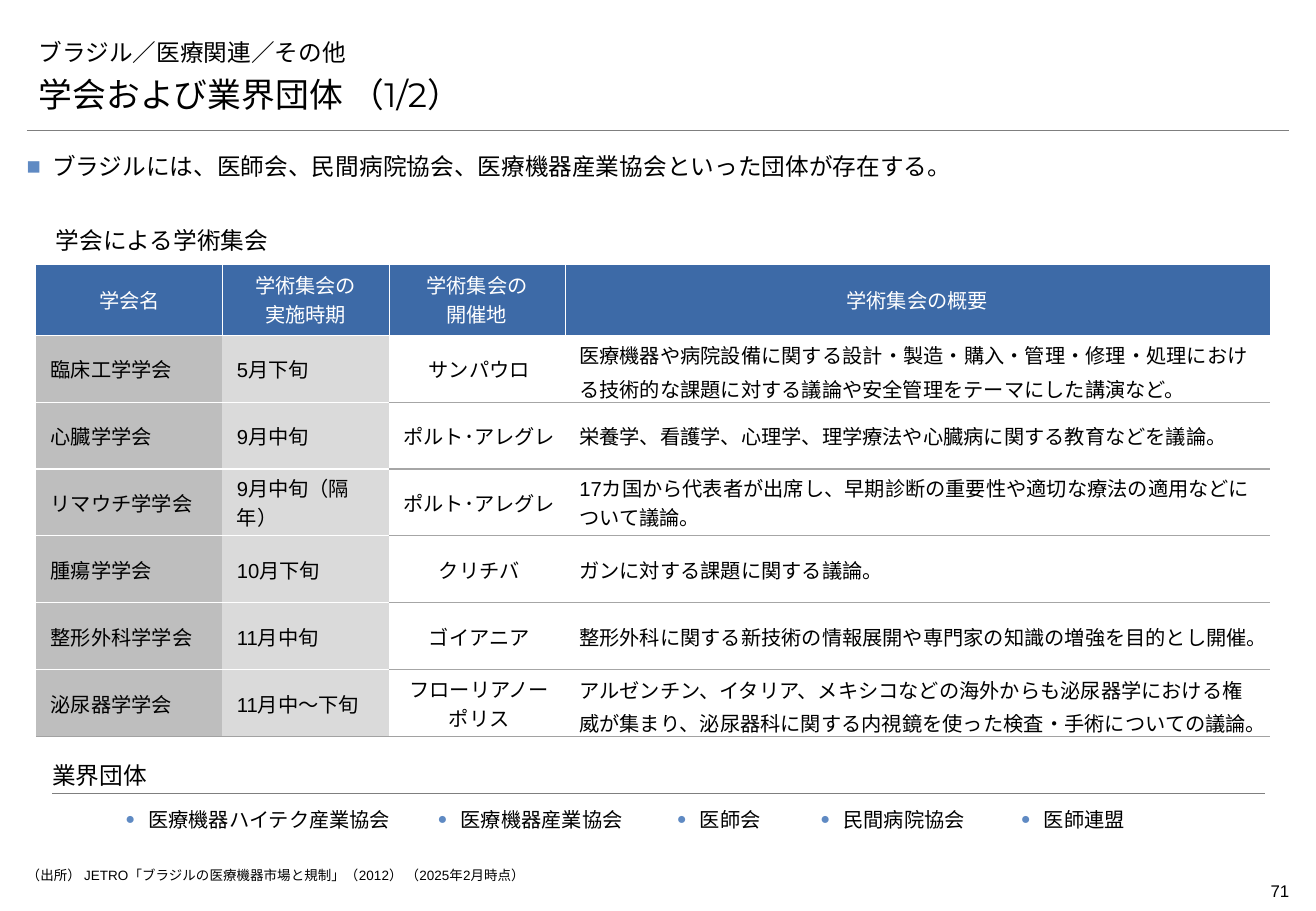
from dataclasses import dataclass

from lxml.etree import SubElement
from pptx import Presentation
from pptx.dml.color import RGBColor
from pptx.enum.shapes import MSO_CONNECTOR
from pptx.enum.text import MSO_ANCHOR, PP_ALIGN
from pptx.oxml.ns import qn
from pptx.util import Cm, Pt


@dataclass(frozen=True)
class Theme:
    """Colours, fonts and type sizes of the slide."""
    ink: str = "000000"
    white: str = "FFFFFF"
    header: str = "3D6AA7"
    name_fill: str = "BEBEBE"
    date_fill: str = "DADADA"
    bullet: str = "5F8AC3"
    rule: str = "7F7F7F"
    row_line: str = "A6A6A6"
    last_line: str = "A2A2A2"
    body_font: str = "Arial"
    title_font: str = "Montserrat"
    asian_font: str = "Noto Sans CJK JP"
    title: int = 20
    heading: int = 14
    cell: int = 12
    number: int = 10
    source: int = 8


@dataclass(frozen=True)
class Box:
    """A rectangle in centimetres."""
    left: float
    top: float
    width: float
    height: float

    def inner(self, left, top, width, height):
        """Return a box placed relative to this one."""
        return Box(self.left + left, self.top + top, width, height)

    def lengths(self):
        """Return left, top, width and height as lengths."""
        return [Cm(value) for value in (self.left, self.top, self.width, self.height)]


THEME = Theme()
MEETINGS = [
    ("学会名", "学術集会の\n実施時期", "学術集会の\n開催地", "学術集会の概要"),
    ("臨床工学学会", "5月下旬", "サンパウロ",
     "医療機器や病院設備に関する設計・製造・購入・管理・修理・処理における技術的な課題に対する議論や安全管理をテーマにした講演など。"),
    ("心臓学学会", "9月中旬", "ポルト･アレグレ",
     "栄養学、看護学、心理学、理学療法や心臓病に関する教育などを議論。"),
    ("リマウチ学学会", "9月中旬（隔年）", "ポルト･アレグレ",
     "17カ国から代表者が出席し、早期診断の重要性や適切な療法の適用などについて議論。"),
    ("腫瘍学学会", "10月下旬", "クリチバ", "ガンに対する課題に関する議論。"),
    ("整形外科学学会", "11月中旬", "ゴイアニア",
     "整形外科に関する新技術の情報展開や専門家の知識の増強を目的とし開催。"),
    ("泌尿器学学会", "11月中～下旬", "フローリアノーポリス",
     "アルゼンチン、イタリア、メキシコなどの海外からも泌尿器学における権威が集まり、泌尿器科に関する内視鏡を使った検査・手術についての議論。"),
]
ASSOCIATIONS = ["医療機器ハイテク産業協会", "医療機器産業協会", "医師会", "民間病院協会", "医師連盟"]


def add_bullet(para, mark, indent, percent):
    """Give a paragraph a coloured bullet and a hanging indent."""
    properties = para._p.get_or_add_pPr()
    properties.set("marL", str(Cm(indent)))
    properties.set("indent", str(-Cm(indent)))
    colour = SubElement(properties, qn("a:buClr"))
    SubElement(colour, qn("a:srgbClr"), val=THEME.bullet)
    SubElement(properties, qn("a:buSzPct"), val=str(percent * 1000))
    SubElement(properties, qn("a:buFont"), typeface=THEME.body_font)
    SubElement(properties, qn("a:buChar"), char=mark)


def write(frame, text, size=THEME.cell, font=THEME.body_font, colour=THEME.ink,
          align=PP_ALIGN.LEFT, spacing=None, after=None, bullet=None):
    """Write one paragraph per line of text in the given format."""
    for index, line in enumerate(text.split("\n")):
        para = frame.add_paragraph() if index else frame.paragraphs[0]
        if bullet:
            add_bullet(para, *bullet)
        para.alignment = align
        if spacing:
            para.line_spacing = spacing
        if after:
            para.space_after = Pt(after)
        for piece in line.replace("・", "|・|").split("|"):
            span = para.add_run()
            span.text = piece
            span.font.size = Pt(size)
            span.font.name = font
            span.font.color.rgb = RGBColor.from_string(colour)
            asian = THEME.body_font if piece == "・" else THEME.asian_font
            SubElement(span._r.get_or_add_rPr(), qn("a:ea"), typeface=asian)


def set_margins(target, margins):
    """Set left, top, right and bottom margins in centimetres."""
    left, top, right, bottom = [Cm(value) for value in margins]
    target.margin_left, target.margin_top = left, top
    target.margin_right, target.margin_bottom = right, bottom


def add_text(page, box, text, margins=(0, 0, 0, 0), anchor=MSO_ANCHOR.TOP, **style):
    """Add a wrapping text box."""
    frame = page.shapes.add_textbox(*box.lengths()).text_frame
    frame.word_wrap = True
    frame.vertical_anchor = anchor
    set_margins(frame, margins)
    write(frame, text, **style)


def add_rule(page, left, top, width, weight):
    """Add a thin horizontal rule."""
    line = page.shapes.add_connector(
        MSO_CONNECTOR.STRAIGHT, Cm(left), Cm(top), Cm(left + width), Cm(top))
    line.line.color.rgb = RGBColor.from_string(THEME.rule)
    line.line.width = Pt(weight)
    SubElement(line._element.spPr, qn("a:effectLst"))


def add_grid(page, box, widths, heights):
    """Add an unstyled table with the given column widths and row heights."""
    table = page.shapes.add_table(len(heights), len(widths), *box.lengths()).table
    table.first_row = table.horz_banding = False
    style = table._tbl.tblPr.find(qn("a:tableStyleId"))
    style.text = "{2D5ABB26-0587-4C30-8999-92F81FD0307C}"
    for column, width in zip(table.columns, widths):
        column.width = Cm(width)
    for row, height in zip(table.rows, heights):
        row.height = Cm(height)
    return table


def fill_cell(cell, text, fill, margins, edges=None, **style):
    """Set a cell's borders, fill, margins and text."""
    properties = cell._tc.get_or_add_tcPr()
    for side, (colour, weight) in (edges or {}).items():
        line = SubElement(properties, qn(f"a:ln{side}"), w=str(Pt(weight)))
        solid = SubElement(line, qn("a:solidFill"))
        SubElement(solid, qn("a:srgbClr"), val=colour)
    cell.fill.solid()
    cell.fill.fore_color.rgb = RGBColor.from_string(fill)
    cell.vertical_anchor = MSO_ANCHOR.MIDDLE
    set_margins(cell, margins)
    write(cell.text_frame, text, **style)


def row_edge(row, column):
    """Return colour and weight of the line below a row in one column."""
    if row == len(MEETINGS) - 1:
        return THEME.last_line, 0.5
    return (THEME.row_line if row > 0 and column > 1 else THEME.white), 0.75


def add_header(page, box):
    """Add the breadcrumb, the title and the rule below them."""
    style = dict(margins=(0.25, 0.13, 0.25, 0.13), anchor=MSO_ANCHOR.BOTTOM,
                 font=THEME.title_font)
    add_text(page, box.inner(0, 0, box.width, 0.99), "ブラジル／医療関連／その他",
             size=THEME.heading, **style)
    add_text(page, box.inner(0, 0.99, box.width, 0.99), "学会および業界団体 （1/2）",
             size=THEME.title, **style)
    add_rule(page, box.left, box.top + box.height, box.width, 0.25)


def add_heading(page, box, text):
    """Add a section heading."""
    add_text(page, box, text, margins=(0, 0.13, 0, 0.2), anchor=MSO_ANCHOR.BOTTOM,
             size=THEME.heading, font=THEME.title_font)


def add_meetings(page, box):
    """Add the heading and table of academic meetings."""
    add_heading(page, box.inner(0.41, 0, 15.19, 0.99), "学会による学術集会")
    heights = [1.47] + [1.4] * (len(MEETINGS) - 1)
    table = add_grid(page, box.inner(0, 1.02, box.width, sum(heights)),
                     [3.89, 3.48, 3.68, 14.73], heights)
    fills = [THEME.name_fill, THEME.date_fill, THEME.white, THEME.white]
    for row, texts in enumerate(MEETINGS):
        for column, text in enumerate(texts):
            edges = {}
            if row == 0 and column < len(texts) - 1:
                edges["R"] = (THEME.white, 0.5)
            if row:
                edges["T"] = row_edge(row - 1, column)
            edges["B"] = row_edge(row, column)
            centred = row == 0 or column == 2
            fill_cell(table.cell(row, column), text,
                      fills[column] if row else THEME.header,
                      (0.3, 0.03, 0.2, 0.03) if row else (0.25, 0.1, 0.25, 0.13), edges,
                      colour=THEME.ink if row else THEME.white,
                      align=PP_ALIGN.CENTER if centred else PP_ALIGN.LEFT,
                      spacing=1.13 if "・" in text else None)


def add_associations(page, box):
    """Add the heading, rule and bulleted row of industry associations."""
    widths = [6.53, 5, 3, 4.19, 3.4]
    table = add_grid(page, box.inner(1.53, 0.99, sum(widths), 0.79), widths, [0.79])
    for column, name in enumerate(ASSOCIATIONS):
        fill_cell(table.cell(0, column), name, THEME.white, (0, 0.03, 0.03, 0),
                  bullet=("●", 0.48, 80))
    add_rule(page, box.left, box.top + 0.87, box.width, 0.75)
    add_heading(page, box.inner(0, 0, box.width, 0.99), "業界団体")


def add_footer(page, box):
    """Add the source line and the page number."""
    add_text(page, box.inner(0, 0, 24, 0.41),
             "（出所） JETRO「ブラジルの医療機器市場と規制」（2012） （2025年2月時点）",
             size=THEME.source)
    add_text(page, box.inner(box.width - 2, 0.15, 2, 0.69), "71",
             margins=(0, 0.13, 0, 0.13), size=THEME.number, align=PP_ALIGN.RIGHT)


def main():
    """Build and save the slide."""
    deck = Presentation()
    deck.slide_width, deck.slide_height = Cm(27.51), Cm(19.05)
    page = deck.slides.add_slide(deck.slide_layouts[6])
    add_header(page, Box(0.56, 0.53, 26.39, 2.19))
    add_text(page, Box(0.56, 3.12, 26.39, 0.66),
             "ブラジルには、医師会、民間病院協会、医療機器産業協会といった団体が存在する。",
             size=THEME.heading, align=PP_ALIGN.JUSTIFY, spacing=1.1, after=2,
             bullet=("■", 0.53, 100))
    add_meetings(page, Box(0.76, 4.52, 25.78, 10.89))
    add_associations(page, Box(1.09, 15.72, 25.35, 1.78))
    add_footer(page, Box(0.56, 18.14, 26.39, 0.84))
    deck.save("out.pptx")


if __name__ == "__main__":
    main()
